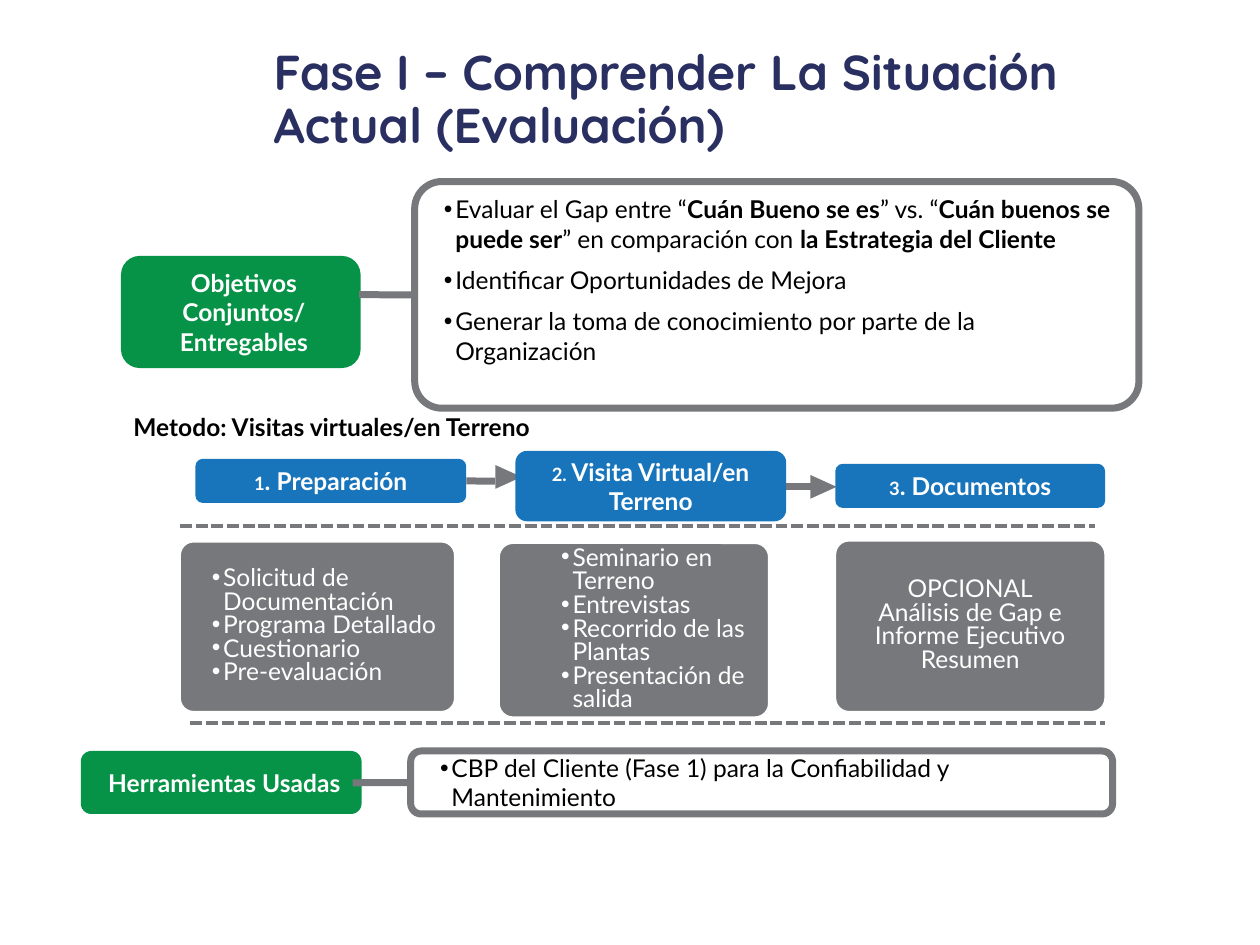
from dataclasses import dataclass
from typing import NamedTuple, Optional

from lxml.etree import SubElement as Sub
from pptx import Presentation
from pptx.dml.color import RGBColor as Rgb
from pptx.enum.dml import MSO_LINE as Dash
from pptx.enum.shapes import MSO_CONNECTOR as Link, MSO_SHAPE as Form
from pptx.enum.text import MSO_ANCHOR as Anchor, MSO_AUTO_SIZE as Fit, PP_ALIGN as Align
from pptx.oxml.ns import qn
from pptx.shapes.autoshape import Shape
from pptx.shapes.connector import Connector
from pptx.slide import Slide
from pptx.text.text import TextFrame
from pptx.util import Cm, Pt


@dataclass(frozen=True)
class Theme:
    navy: Rgb = Rgb.from_string("292F60")
    green: Rgb = Rgb.from_string("079347")
    blue: Rgb = Rgb.from_string("1875BB")
    gray: Rgb = Rgb.from_string("77787B")
    white: Rgb = Rgb.from_string("FFFFFF")
    black: Rgb = Rgb.from_string("000000")
    head: str = "Quicksand"
    body: str = "Lato"
    big: Pt = Pt(28)
    mid: Pt = Pt(14)
    tiny: Pt = Pt(10.5)
    thick: Pt = Pt(4)
    thin: Pt = Pt(2.25)
    hair: Pt = Pt(1)


T = Theme()


class Area(NamedTuple):
    left: float
    top: float
    width: float
    height: float

    def size(self) -> list[Cm]:
        return [Cm(v) for v in self]


class Part(NamedTuple):
    text: str
    bold: Optional[bool] = None
    size: Optional[Pt] = None


@dataclass(frozen=True)
class Look:
    color: Rgb
    bold: bool = False
    align: Align = Align.LEFT
    indent: float = 0
    bullet: bool = False
    lead: Optional[Pt] = None
    before: Pt = Pt(0)
    after: Pt = Pt(0)


@dataclass(frozen=True)
class Box:
    area: Area
    fill: Rgb
    look: Look
    paras: list[list[Part]]
    line: Optional[Rgb] = None
    weight: Pt = T.hair
    round: Optional[float] = None
    pad: tuple[float, float] = (0.08, 0.08)
    anchor: Anchor = Anchor.MIDDLE
    wrap: bool = True


def plain(*lines: str) -> list[list[Part]]:
    return [[Part(line)] for line in lines]


def write(frame: TextFrame, paras: list[list[Part]], look: Look) -> None:
    for i, parts in enumerate(paras):
        para = frame.add_paragraph() if i else frame.paragraphs[0]
        para.alignment = look.align
        para.space_before = look.before if i else Pt(0)
        para.space_after = look.after
        if look.lead:
            para.line_spacing = look.lead
        props = para._p.get_or_add_pPr()
        props.set("marL", str(Cm(look.indent)))
        props.set("indent", str(Cm(-0.23) if look.bullet else 0))
        if look.bullet:
            Sub(props, qn("a:buFont")).set("typeface", "Arial")
            Sub(props, qn("a:buChar")).set("char", "•")
        font = para.font
        font.name, font.size, font.bold = T.body, T.mid, look.bold
        font.color.rgb = look.color
        for part in parts:
            run = para.add_run()
            run.text = part.text
            if part.bold is not None:
                run.font.bold = part.bold
            if part.size is not None:
                run.font.size = part.size


def block(slide: Slide, box: Box) -> Shape:
    shape = slide.shapes.add_shape(Form.ROUNDED_RECTANGLE, *box.area.size())
    shape.shadow.inherit = False
    shape.fill.solid()
    shape.fill.fore_color.rgb = box.fill
    if box.line is None:
        shape.line.fill.background()
    else:
        shape.line.color.rgb = box.line
        shape.line.width = box.weight
    if box.round is not None:
        shape.adjustments[0] = box.round
    frame = shape.text_frame
    frame.word_wrap = box.wrap
    frame.vertical_anchor = box.anchor
    frame.margin_left = frame.margin_right = Cm(box.pad[0])
    frame.margin_top = frame.margin_bottom = Cm(box.pad[1])
    write(frame, box.paras, box.look)
    return shape


def stroke(slide: Slide, x1: float, y1: float, x2: float, y2: float,
           weight: Pt = T.thick, dash: Optional[Dash] = None) -> Connector:
    line = slide.shapes.add_connector(Link.STRAIGHT, Cm(x1), Cm(y1), Cm(x2), Cm(y2))
    line.line.color.rgb = T.gray
    line.line.width = weight
    if dash is not None:
        line.line.dash_style = dash
    Sub(line._element.spPr, qn("a:effectLst"))
    return line


def point(slide: Slide, left: float, top: float) -> None:
    tip = slide.shapes.add_shape(Form.ISOSCELES_TRIANGLE, *Area(left, top, 0.48, 0.53).size())
    tip.rotation = 90
    tip.shadow.inherit = False
    tip.fill.solid()
    tip.fill.fore_color.rgb = T.gray
    tip.line.fill.background()


def label(area: Area, paras: list[list[Part]], **more) -> Box:
    look = Look(T.white, bold=True, align=Align.CENTER, indent=0.13)
    return Box(area, T.green, look, paras, **more)


def panel(area: Area, indent: float, paras: list[list[Part]], **more) -> Box:
    look = Look(T.black, indent=indent, bullet=True, before=Pt(4.5), after=Pt(2.2))
    return Box(area, T.white, look, paras, T.gray, T.thick, pad=(0.18, 0.1), **more)


def step(area: Area, mark: str, name: str) -> Box:
    look = Look(T.white, bold=True, align=Align.CENTER)
    return Box(area, T.blue, look, [[Part(mark, size=T.tiny), Part(name)]])


def card(area: Area, indent: float, *lines: str) -> Box:
    listed = indent > 0
    look = Look(T.white, align=Align.LEFT if listed else Align.CENTER,
                indent=indent, bullet=listed, lead=Pt(13.5))
    return Box(area, T.gray, look, plain(*lines), T.white, round=0.08)


GOALS = [
    [Part("Evaluar el Gap entre “"), Part("Cuán Bueno se es", True), Part("” vs. “"),
     Part("Cuán buenos se puede ser", True), Part("” en comparación con "),
     Part("la Estrategia del Cliente", True)],
    *plain("Identificar Oportunidades de Mejora",
           "Generar la toma de conocimiento por parte de la Organización"),
]
STEPS = [
    step(Area(3.94, 9.25, 5.46, 0.89), "1", ". Preparación"),
    step(Area(10.39, 9.09, 5.46, 1.42), "2. ", "Visita Virtual/en Terreno"),
    step(Area(16.84, 9.35, 5.44, 0.89), "3", ". Documentos"),
]
CARDS = [
    card(Area(3.63, 10.92, 5.54, 3.43), 0.71, "Solicitud de Documentación",
         "Programa Detallado", "Cuestionario", "Pre-evaluación"),
    card(Area(10.06, 10.95, 5.44, 3.51), 1.32, "Seminario en Terreno", "Entrevistas",
         "Recorrido de las Plantas", "Presentación de salida"),
    card(Area(16.84, 10.9, 5.44, 3.45), 0, "OPCIONAL",
         "Análisis de Gap e Informe Ejecutivo Resumen"),
]


def main() -> None:
    deck = Presentation()
    deck.slide_width, deck.slide_height = Cm(25.4), Cm(19.05)
    slide = deck.slides.add_slide(deck.slide_layouts[5])

    title = slide.shapes.title
    title.left, title.top, title.width, title.height = Area(5.26, 0.69, 18.95, 2.69).size()
    frame = title.text_frame
    frame.text = "Fase I – Comprender La Situación Actual (Evaluación)"
    frame.auto_size = Fit.NONE
    frame.vertical_anchor = Anchor.MIDDLE
    para = frame.paragraphs[0]
    para.alignment, para.line_spacing = Align.LEFT, 0.9
    para.font.name, para.font.size, para.font.bold = T.head, T.big, True
    para.font.color.rgb = T.navy

    point(slide, 10.01, 9.35)
    point(slide, 16.36, 9.55)
    tools = block(slide, panel(Area(8.28, 15.14, 14.15, 1.27), 0.58, plain(
        "CBP del Cliente (Fase 1) para la Confiabilidad y Mantenimiento")))
    goals = block(slide, panel(Area(8.36, 3.66, 14.6, 4.57), 0.48, GOALS,
                               round=0.12, anchor=Anchor.TOP))
    note = slide.shapes.add_textbox(*Area(2.44, 8.18, 9.75, 0.86).size())
    note.text_frame.word_wrap = False
    write(note.text_frame, plain("Metodo: Visitas virtuales/en Terreno"), Look(T.black, bold=True))
    block(slide, label(Area(1.63, 15.14, 5.66, 1.27), plain("Herramientas Usadas"), wrap=False))
    block(slide, label(Area(2.44, 5.16, 4.83, 2.26), plain("Objetivos Conjuntos/", "Entregables"),
                       pad=(0.25, 0.13), anchor=Anchor.TOP))
    first, second, _ = [block(slide, box) for box in STEPS]
    for box in CARDS:
        block(slide, box)

    stroke(slide, 9.4, 9.7, 9.98, 9.7).begin_connect(first, 3)
    stroke(slide, 15.85, 9.8, 16.36, 9.8).begin_connect(second, 3)
    stroke(slide, 7.24, 5.94, 8.36, 5.94).end_connect(goals, 1)
    stroke(slide, 7.11, 15.78, 8.28, 15.78).end_connect(tools, 1)
    for left, top in ((3.63, 10.6), (3.84, 14.58)):
        stroke(slide, left, top, left + 18.44, top, T.thin, Dash.SQUARE_DOT)
    deck.save("out.pptx")


if __name__ == "__main__":
    main()
